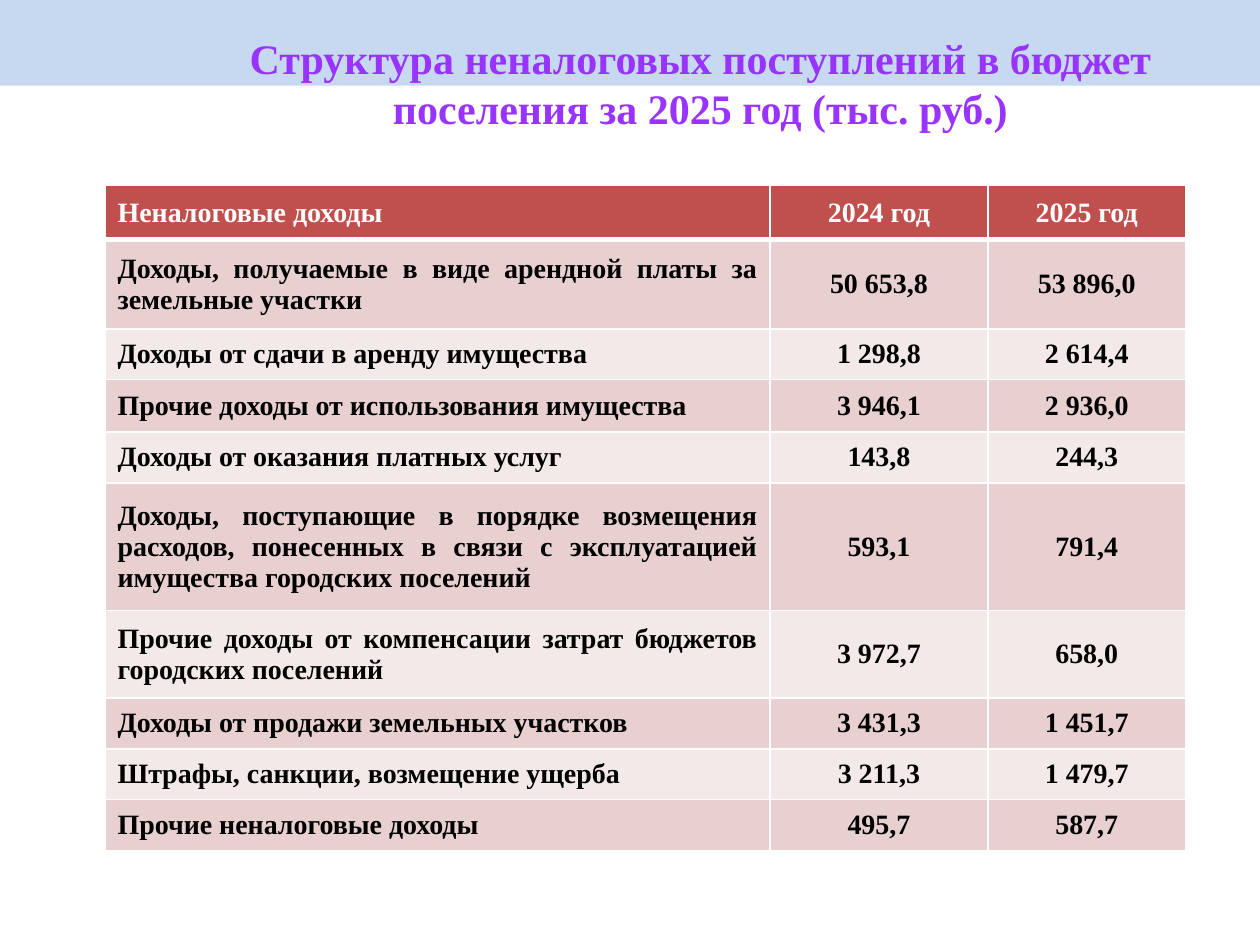
from lxml.etree import SubElement
from pptx import Presentation
from pptx.dml.color import RGBColor
from pptx.enum.shapes import MSO_SHAPE
from pptx.enum.text import MSO_ANCHOR, PP_ALIGN
from pptx.oxml.ns import qn
from pptx.util import Pt

COLORS = {
    "band": "C6D9F1",
    "title": "9933FF",
    "header": "C0504D",
    "odd_row": "E8D0D0",
    "even_row": "F4E9E9",
    "white": "FFFFFF",
    "black": "000000",
}
COLUMN_WIDTHS = [380, 124.5, 113]
ROW_HEIGHTS = [31, 51, 29, 30, 29, 73, 50, 29, 29, 29]
INCOME = [
    ("Неналоговые доходы", "2024 год", "2025 год"),
    ("Доходы, получаемые в виде арендной платы за земельные участки", "50 653,8", "53 896,0"),
    ("Доходы от сдачи в аренду имущества", "1 298,8", "2 614,4"),
    ("Прочие доходы от использования имущества", "3 946,1", "2 936,0"),
    ("Доходы от оказания платных услуг", "143,8", "244,3"),
    ("Доходы, поступающие в порядке возмещения расходов, понесенных в связи с "
     "эксплуатацией имущества городских поселений", "593,1", "791,4"),
    ("Прочие доходы от компенсации затрат бюджетов городских поселений", "3 972,7", "658,0"),
    ("Доходы от продажи земельных участков", "3 431,3", "1 451,7"),
    ("Штрафы, санкции, возмещение ущерба", "3 211,3", "1 479,7"),
    ("Прочие неналоговые доходы", "495,7", "587,7"),
]


def rgb(name):
    return RGBColor.from_string(COLORS[name])


class SlideBuilder:
    """Holds the text style and the slide being filled."""

    font_name = "Times New Roman"

    def __init__(self, slide):
        self.slide = slide

    def set_text(self, frame, text, size, color, align):
        paragraph = frame.paragraphs[0]
        paragraph.text = text
        paragraph.alignment = align
        font = paragraph.font
        font.name, font.size, font.bold = self.font_name, Pt(size), True
        font.color.rgb = rgb(color)

    def band(self, left, top, width, height):
        band = self.slide.shapes.add_shape(
            MSO_SHAPE.RECTANGLE, Pt(left), Pt(top), Pt(width), Pt(height))
        band.shadow.inherit = False
        band.fill.solid()
        band.fill.fore_color.rgb = rgb("band")
        band.line.fill.background()

    def title(self, text, left, top, width, height):
        frame = self.slide.shapes.add_textbox(
            Pt(left), Pt(top), Pt(width), Pt(height)).text_frame
        frame.word_wrap = True
        self.set_text(frame, text, 24, "title", PP_ALIGN.CENTER)

    def borders(self, cell, top, bottom):
        """Draw white cell borders; side borders are 1 pt wide."""
        properties = cell._tc.get_or_add_tcPr()
        for side, width in (("L", 1), ("R", 1), ("T", top), ("B", bottom)):
            line = SubElement(properties, qn(f"a:ln{side}"), w=str(Pt(width)))
            fill = SubElement(line, qn("a:solidFill"))
            SubElement(fill, qn("a:srgbClr"), val=COLORS["white"])

    def table(self, rows, left, top, widths, heights):
        table = self.slide.shapes.add_table(
            len(rows), len(widths), Pt(left), Pt(top),
            Pt(sum(widths)), Pt(sum(heights))).table
        for column, width in zip(table.columns, widths):
            column.width = Pt(width)
        for r, (values, height) in enumerate(zip(rows, heights)):
            table.rows[r].height = Pt(height)
            fill = "header" if r == 0 else "odd_row" if r % 2 else "even_row"
            label_align = PP_ALIGN.JUSTIFY if r else PP_ALIGN.LEFT
            for c, value in enumerate(values):
                cell = table.cell(r, c)
                self.borders(cell, top=3 if r == 1 else 1, bottom=1 if r else 3)
                cell.fill.solid()
                cell.fill.fore_color.rgb = rgb(fill)
                cell.vertical_anchor = MSO_ANCHOR.MIDDLE
                self.set_text(cell.text_frame, value, 16, "black" if r else "white",
                              PP_ALIGN.CENTER if c else label_align)


def main():
    presentation = Presentation()
    presentation.slide_width, presentation.slide_height = Pt(720), Pt(540)
    builder = SlideBuilder(presentation.slides.add_slide(presentation.slide_layouts[6]))
    builder.band(0, 0, 720, 49)
    builder.title("Структура неналоговых поступлений в бюджет поселения "
                  "за 2025 год (тыс. руб.)", 80.5, 15, 639.5, 31)
    builder.table(INCOME, 60, 106, COLUMN_WIDTHS, ROW_HEIGHTS)
    presentation.save("out.pptx")


if __name__ == "__main__":
    main()
